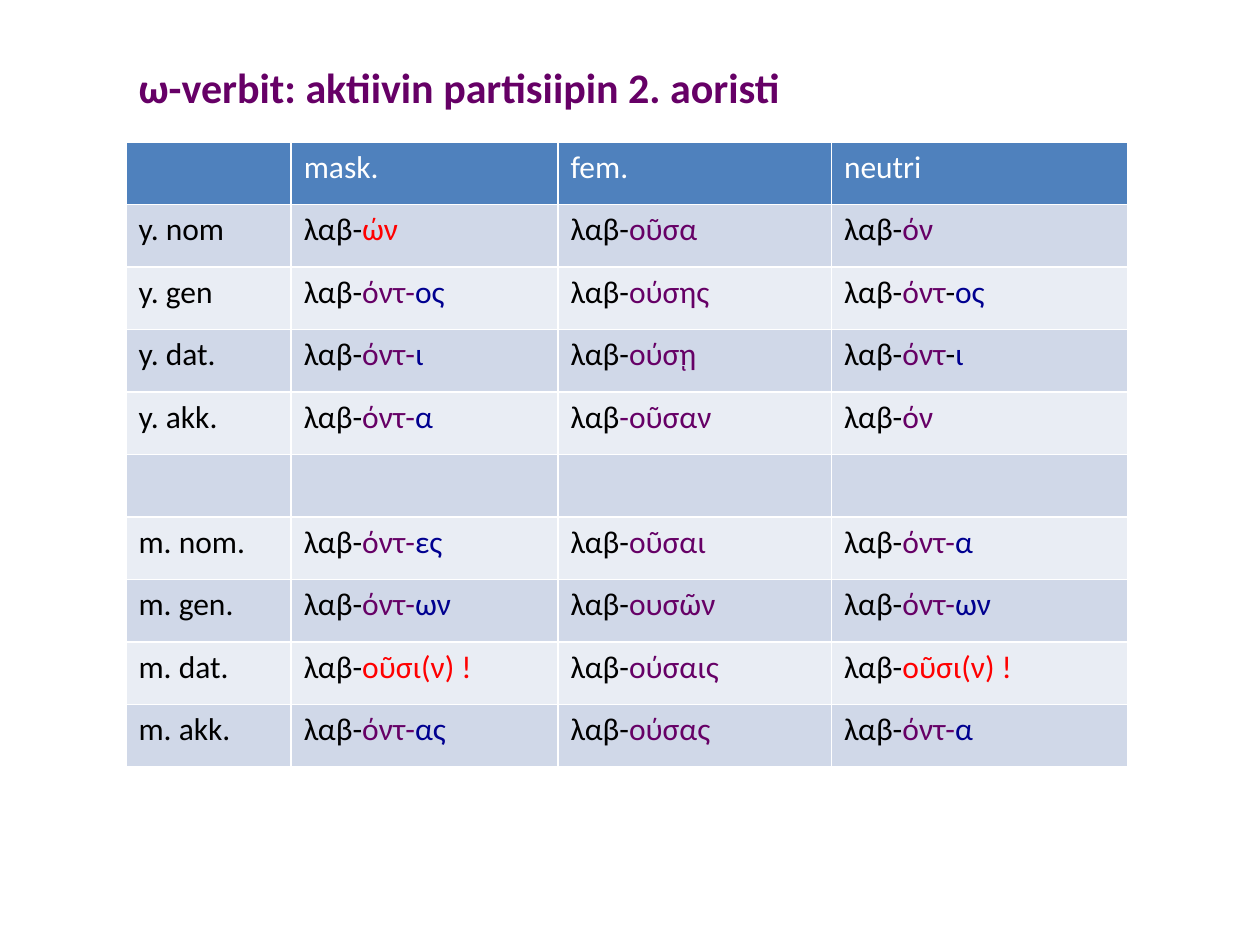
from pptx import Presentation
from pptx.dml.color import RGBColor
from pptx.enum.text import MSO_ANCHOR, MSO_AUTO_SIZE, PP_ALIGN
from pptx.util import Cm, Pt

COLORS = {
    "white": "FFFFFF", "black": "000000", "plum": "660066",
    "blue": "000090", "red": "FF0000",
    "header": "4F81BD", "band": "D0D8E8", "light": "E9EDF4",
}
FONT = "Calibri"
COL_WIDTHS = [3.33, 5.38, 5.51, 5.97]
ROW_HEIGHT = 1.26

# Parts of a form are split by "|"; a part may open with its colour and ":"
HEADINGS = ["", "mask.", "fem.", "neutri"]
FORMS = [
    ["y. nom", "λαβ-|red:ών", "λαβ-|plum:οῦσα", "λαβ-|plum:όν"],
    ["y. gen", "λαβ-|plum:όντ-|blue:ος", "λαβ-|plum:ούσης", "λαβ-|plum:όντ|-|blue:ος"],
    ["y. dat.", "λαβ-|plum:όντ-|blue:ι", "λαβ-|plum:ούσῃ", "λαβ-|plum:όντ|-|blue:ι"],
    ["y. akk.", "λαβ-|plum:όντ-|blue:α", "λαβ|plum:-οῦσαν", "λαβ-|plum:όν"],
    ["", "", "", ""],
    ["m. nom.", "λαβ-|plum:όντ-|blue:ες", "λαβ-|plum:οῦσαι", "λαβ-|plum:όντ-|blue:α"],
    ["m. gen.", "λαβ-|plum:όντ-|blue:ων", "λαβ-|plum:ουσῶν", "λαβ-|plum:όντ-|blue:ων"],
    ["m. dat.", "λαβ-|red:οῦσι(ν) !", "λαβ-|plum:ούσαις", "λαβ-|red:οῦσι(ν) !"],
    ["m. akk.", "λαβ-|plum:όντ-|blue:ας", "λαβ-|plum:ούσας", "λαβ-|plum:όντ-|blue:α"],
]


def rgb(name):
    return RGBColor.from_string(COLORS[name])


def add_run(p, text, color, size, bold=False):
    r = p.add_run()
    r.text = text
    for key, value in {"name": FONT, "size": Pt(size), "bold": bold}.items():
        setattr(r.font, key, value)
    r.font.color.rgb = rgb(color)


def place_title(s, left, top, width, height):
    title = s.shapes.title
    box = {"left": left, "top": top, "width": width, "height": height}
    for key, value in box.items():
        setattr(title, key, Cm(value))
    tf = title.text_frame
    frame = {"word_wrap": True, "auto_size": MSO_AUTO_SIZE.NONE,
             "vertical_anchor": MSO_ANCHOR.TOP}
    for key, value in frame.items():
        setattr(tf, key, value)
    p = tf.paragraphs[0]
    p.alignment = PP_ALIGN.LEFT
    add_run(p, "ω-verbit: aktiivin partisiipin 2. aoristi", "plum", 24, bold=True)


def fill_cell(cell, form, fill, default_color):
    cell.fill.solid()
    cell.fill.fore_color.rgb = rgb(fill)
    p = cell.text_frame.paragraphs[0]
    for part in filter(None, form.split("|")):
        color, _, text = part.rpartition(":")
        add_run(p, text, color or default_color, 18)


def place_forms_table(s, left, top):
    rows = [HEADINGS, *FORMS]
    table = s.shapes.add_table(
        len(rows), len(COL_WIDTHS), Cm(left), Cm(top),
        Cm(sum(COL_WIDTHS)), Cm(ROW_HEIGHT * len(rows))).table
    for column, width in zip(table.columns, COL_WIDTHS):
        column.width = Cm(width)
    for i, row in enumerate(rows):
        table.rows[i].height = Cm(ROW_HEIGHT)
        fill = "header" if i == 0 else ("light", "band")[i % 2]
        for j, form in enumerate(row):
            fill_cell(table.cell(i, j), form, fill, "black" if i else "white")


def main():
    prs = Presentation()
    prs.slide_width, prs.slide_height = Cm(25.4), Cm(19.05)
    s = prs.slides.add_slide(prs.slide_layouts[5])
    # Title
    place_title(s, 2.54, 1.12, 17.04, 2.06)
    # Participle forms by case and gender
    place_forms_table(s, 2.54, 2.86)
    prs.save("out.pptx")


if __name__ == "__main__":
    main()
